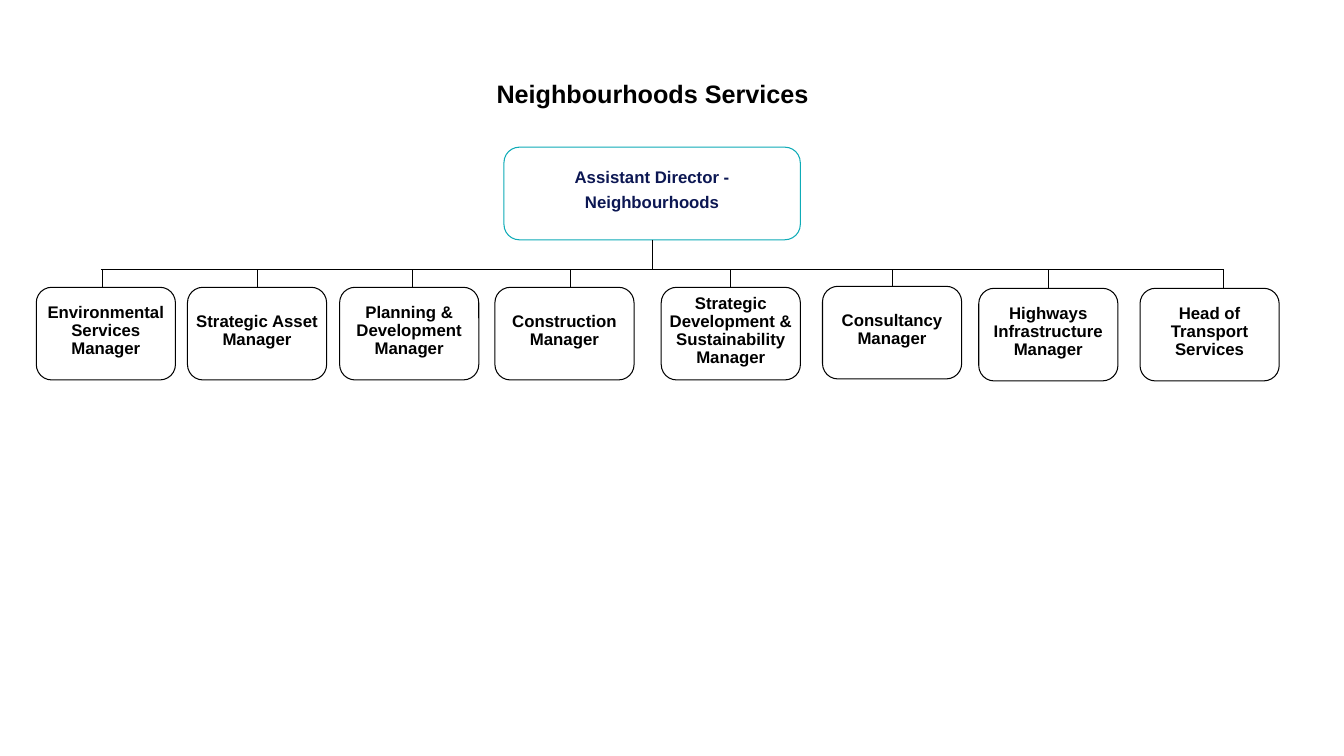
from lxml import etree
from pptx import Presentation
from pptx.dml.color import RGBColor
from pptx.enum.shapes import MSO_CONNECTOR as CONN, MSO_SHAPE as SHAPE
from pptx.enum.text import MSO_ANCHOR as ANCHOR, MSO_AUTO_SIZE as AUTO, PP_ALIGN as ALIGN
from pptx.oxml.ns import qn
from pptx.util import Pt

BLACK = RGBColor(0x00, 0x00, 0x00)
TEAL = RGBColor(0x0E, 0xAB, 0xB7)
NAVY = RGBColor(0x0C, 0x17, 0x53)

BOX_W, BOX_H = 99.4, 66.2
DIRECTOR_X, DIRECTOR_Y, DIRECTOR_W = 360, 105.1, 211.7
BAR_Y = 192.4

# name, box left, box top, x of the line down from the bar
MANAGERS = [
    ("Environmental Services Manager", 25.9, 205.2, 73.4),
    ("Strategic Asset Manager", 133.9, 205.2, 183.6),
    ("Planning & Development Manager", 242.6, 205.2, 294.5),
    ("Construction Manager", 353.5, 205.2, 407.5),
    ("Strategic Development & Sustainability Manager", 472.3, 205.2, 522),
    ("Consultancy Manager", 587.5, 204.5, 637.2),
    ("Highways Infrastructure Manager", 699.1, 205.9, 748.8),
    ("Head of Transport Services", 814.3, 205.9, 874.1),
]

prs = Presentation()
prs.slide_width, prs.slide_height = Pt(960), Pt(540)
s = prs.slides.add_slide(prs.slide_layouts[6])


def add_box(lines, x, y, w, line_color, text_color):
    sp = s.shapes.add_shape(SHAPE.ROUNDED_RECTANGLE, Pt(x), Pt(y), Pt(w), Pt(BOX_H))
    sp.shadow.inherit = False
    sp.fill.background()
    sp.line.color.rgb = line_color
    sp.line.width = Pt(0.75)
    tf = sp.text_frame
    tf.word_wrap = True
    tf.vertical_anchor = ANCHOR.MIDDLE
    tf.margin_left = tf.margin_right = tf.margin_top = Pt(0.7)
    tf.margin_bottom = Pt(4.3)
    tf.text = "\n".join(lines)
    for p in tf.paragraphs:
        p.alignment = ALIGN.CENTER
        p.line_spacing = 0.9
        p.space_after = Pt(4.8)
        p.font.name, p.font.size, p.font.bold = "Arial", Pt(12), True
        p.font.color.rgb = text_color
    return sp


def add_line(x1, y1, x2, y2):
    line = s.shapes.add_connector(CONN.STRAIGHT, Pt(x1), Pt(y1), Pt(x2), Pt(y2))
    line.line.color.rgb = BLACK
    line.line.width = Pt(0.5)
    etree.SubElement(line._element.spPr, qn("a:effectLst"))
    return line


title = s.shapes.add_textbox(Pt(241.9), Pt(52.6), Pt(448.6), Pt(28.8))
tf = title.text_frame
tf.word_wrap = True
tf.auto_size = AUTO.SHAPE_TO_FIT_TEXT
p = tf.paragraphs[0]
p.text = "Neighbourhoods Services"
p.alignment = ALIGN.CENTER
p.font.name, p.font.size, p.font.bold = "Arial", Pt(18), True
p.font.color.rgb = BLACK

director = add_box(["Assistant Director -", "Neighbourhoods"],
                   DIRECTOR_X, DIRECTOR_Y, DIRECTOR_W, TEAL, NAVY)
stem_x = DIRECTOR_X + DIRECTOR_W / 2
stem = add_line(stem_x, DIRECTOR_Y + BOX_H, stem_x, BAR_Y)
stem.begin_connect(director, 2)
add_line(72, BAR_Y, MANAGERS[-1][3], BAR_Y)

for name, x, y, drop_x in MANAGERS:
    box = add_box([name], x, y, BOX_W, BLACK, BLACK)
    drop = add_line(drop_x, BAR_Y, drop_x, y)
    if abs(x + BOX_W / 2 - drop_x) < 0.1:
        drop.end_connect(box, 0)

prs.save("out.pptx")
